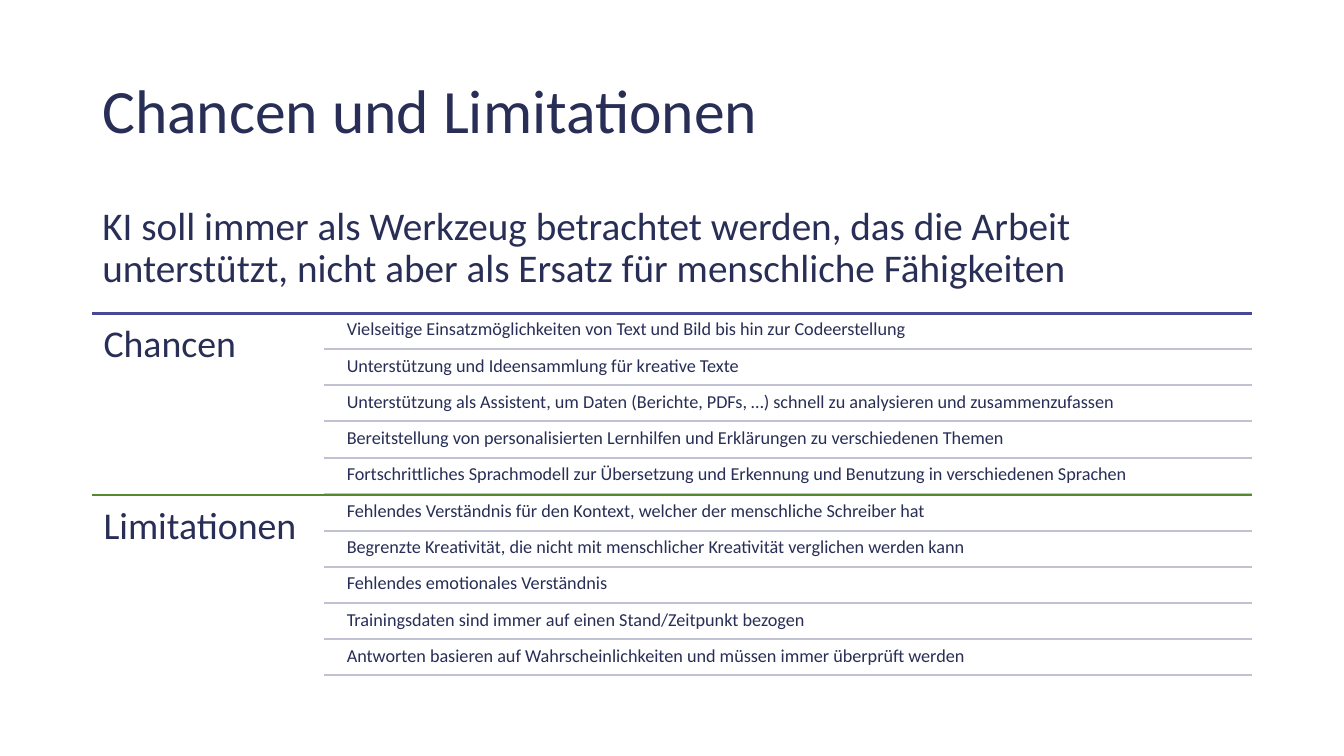
import pptx
import pptx.dml.color
import pptx.enum.shapes
import pptx.enum.text
import pptx.oxml.ns
import pptx.util
from dataclasses import dataclass
from lxml import etree
from pptx.util import Cm


@dataclass(frozen=True)
class Theme:
    font: str = "Calibri"
    ink: str = "282E56"
    chances: str = "484898"
    limits: str = "538932"
    divider: str = "C1C1D4"
    title_size: int = 44
    statement_size: int = 28
    heading_size: int = 27
    item_size: int = 13
    rule_width: float = 1.5


theme = Theme()


def add_text(text, left, top, width, height, size, inset_x, inset_y):
    box = slide.shapes.add_textbox(Cm(left), Cm(top), Cm(width), Cm(height))
    frame = box.text_frame
    frame.word_wrap = True
    frame.margin_left = frame.margin_right = Cm(inset_x)
    frame.margin_top = frame.margin_bottom = Cm(inset_y)
    frame.text = text
    paragraph = frame.paragraphs[0]
    paragraph.line_spacing = 0.9
    font = paragraph.runs[0].font
    font.name = theme.font
    font.size = pptx.util.Pt(size)
    font.color.rgb = pptx.dml.color.RGBColor.from_string(theme.ink)
    return frame


def add_rule(left, top, color):
    rule = slide.shapes.add_connector(
        pptx.enum.shapes.MSO_CONNECTOR.STRAIGHT,
        Cm(left), Cm(top), Cm(right_edge), Cm(top))
    rule.line.color.rgb = pptx.dml.color.RGBColor.from_string(color)
    rule.line.width = pptx.util.Pt(theme.rule_width)
    properties = rule._element.spPr
    etree.SubElement(properties, pptx.oxml.ns.qn("a:effectLst"))


presentation = pptx.Presentation()
presentation.slide_width = Cm(33.87)
presentation.slide_height = Cm(19.05)
slide = presentation.slides.add_slide(presentation.slide_layouts[6])

# Shared columns
left_edge = 2.33
content_width = 29.21
right_edge = left_edge + content_width
heading_width = 5.84
divider_left = left_edge + heading_width
item_left = 8.61

# Title and statement
title = add_text("Chancen und Limitationen", left_edge, 1.01, content_width,
                 3.68, theme.title_size, 0.25, 0.13)
title.vertical_anchor = pptx.enum.text.MSO_ANCHOR.MIDDLE
add_text("KI soll immer als Werkzeug betrachtet werden, das die Arbeit "
         "unterstützt, nicht aber als Ersatz für menschliche Fähigkeiten",
         left_edge, 5.07, content_width, 2.5, theme.statement_size, 0.25, 0.13)

# Two sections with one ruled row per item
sections = [
    ("Chancen", theme.chances, [
        "Vielseitige Einsatzmöglichkeiten von Text und Bild bis hin zur Codeerstellung",
        "Unterstützung und Ideensammlung für kreative Texte",
        "Unterstützung als Assistent, um Daten (Berichte, PDFs, …) schnell zu analysieren und zusammenzufassen",
        "Bereitstellung von personalisierten Lernhilfen und Erklärungen zu verschiedenen Themen",
        "Fortschrittliches Sprachmodell zur Übersetzung und Erkennung und Benutzung in verschiedenen Sprachen",
    ]),
    ("Limitationen", theme.limits, [
        "Fehlendes Verständnis für den Kontext, welcher der menschliche Schreiber hat",
        "Begrenzte Kreativität, die nicht mit menschlicher Kreativität verglichen werden kann",
        "Fehlendes emotionales Verständnis",
        "Trainingsdaten sind immer auf einen Stand/Zeitpunkt bezogen",
        "Antworten basieren auf Wahrscheinlichkeiten und müssen immer überprüft werden",
    ]),
]
sections_top = 7.9
section_height = 4.58
row_pitch = 0.91
row_height = 0.86
row_gap = 0.04

for section_index, (heading, color, items) in enumerate(sections):
    section_top = sections_top + section_index * section_height
    add_rule(left_edge, section_top, color)
    add_text(heading, left_edge, section_top, heading_width, section_height,
             theme.heading_size, 0.28, 0.28)
    for item_index, item in enumerate(items):
        item_top = section_top + row_gap + item_index * row_pitch
        add_text(item, item_left, item_top, right_edge - item_left, row_height,
                 theme.item_size, 0.13, 0.13)
        add_rule(divider_left, item_top + row_height, theme.divider)

presentation.save("out.pptx")
